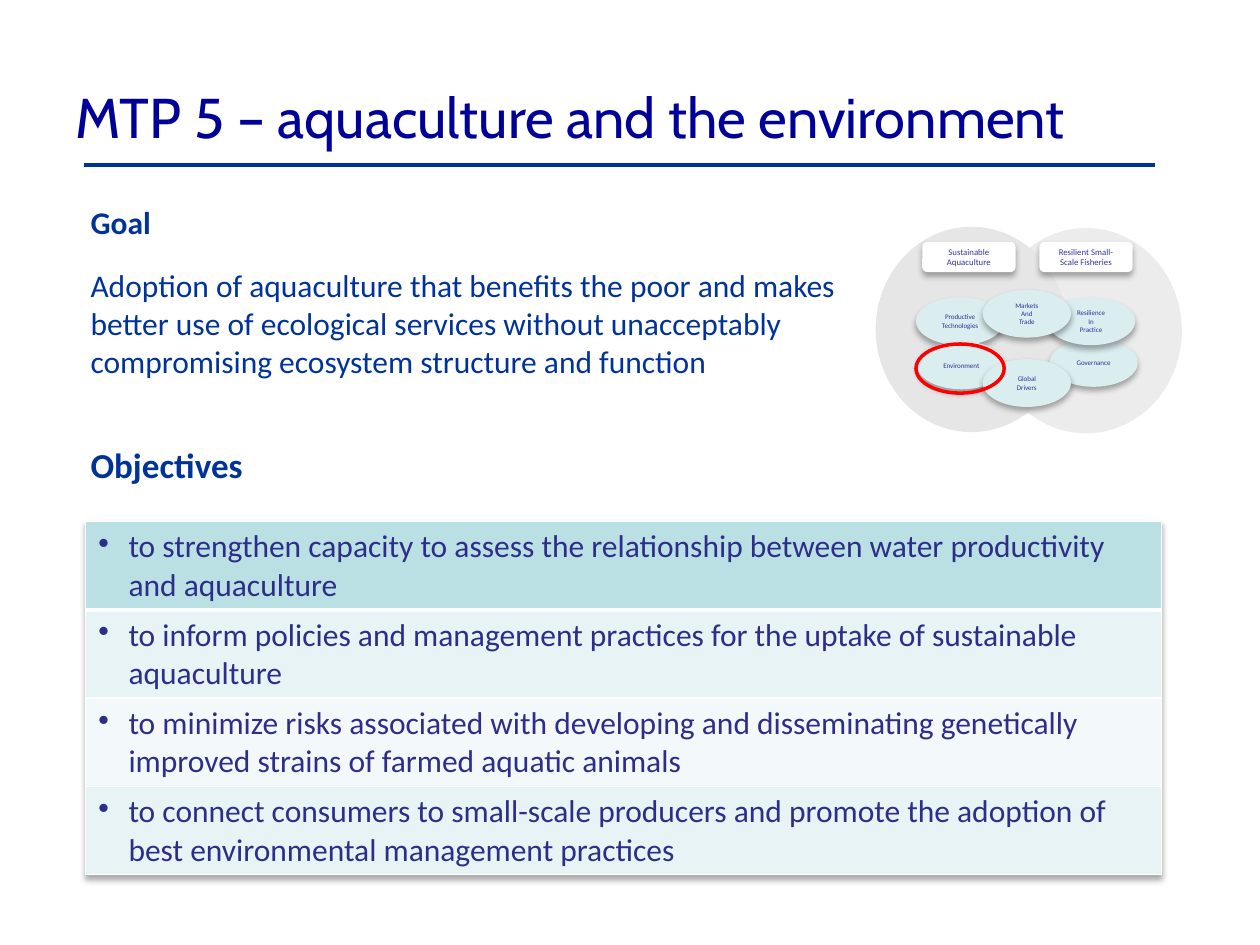
from dataclasses import dataclass

from lxml.etree import SubElement
from pptx import Presentation
from pptx.dml.color import RGBColor
from pptx.enum.shapes import MSO_CONNECTOR, MSO_SHAPE
from pptx.enum.text import MSO_ANCHOR, MSO_AUTO_SIZE, PP_ALIGN
from pptx.oxml import parse_xml
from pptx.oxml.ns import nsdecls, qn
from pptx.util import Inches, Pt

NAVY, INDIGO, WHITE, GREY, AQUA = "003399", "333399", "FFFFFF", "E6E6E6", "DAEDEF"


@dataclass
class Node:
    """A labelled shape of the programme diagram."""
    label: str
    left: float
    top: float


THEMES = [
    Node("Sustainable\nAquaculture", 7.32, 1.92),
    Node("Resilient Small-\nScale Fisheries", 8.25, 1.92),
]
TOPICS = [
    Node("Productive\nTechnologies", 7.27, 2.36),
    Node("Environment", 7.28, 2.71),
    Node("Governance", 8.33, 2.69),
    Node("Global\nDrivers", 7.8, 2.85),
    Node("Resilience\nIn\nPractice", 8.31, 2.36),
    Node("Markets\nAnd\nTrade", 7.8, 2.3),
]
OBJECTIVES = [
    ("to strengthen capacity to assess the relationship between water productivity "
     "and aquaculture", "BBE0E3"),
    ("to inform policies and management practices for the uptake of sustainable "
     "aquaculture", "E7F3F4"),
    ("to minimize risks associated with developing and disseminating genetically "
     "improved strains of farmed aquatic animals", "F3F9FA"),
    ("to connect consumers to small-scale producers and promote the adoption of "
     "best environmental management practices", "E7F3F4"),
]


def rgb(color: str) -> RGBColor:
    return RGBColor.from_string(color)


def box(left: float, top: float, width: float, height: float) -> list:
    return [Inches(value) for value in (left, top, width, height)]


def write(paragraph, text: str, *, size: float, color: str, font: str = "Calibri",
          bold: bool = False, align=PP_ALIGN.LEFT, before: float = 0) -> None:
    paragraph.alignment = align
    paragraph.space_before = Pt(before)
    run = paragraph.add_run()
    run.text = text
    run.font.name, run.font.size, run.font.bold = font, Pt(size), bold
    run.font.color.rgb = rgb(color)


def soft_shadow():
    return parse_xml(
        f'<a:effectLst {nsdecls("a")}><a:outerShdw blurRad="{Pt(3.5)}" dist="{Pt(2.2)}" '
        'dir="5400000" rotWithShape="0"><a:srgbClr val="000000"><a:alpha val="32000"/>'
        '</a:srgbClr></a:outerShdw></a:effectLst>')


def add_plain_shape(shapes, kind, place: list, fill: str):
    shape = shapes.add_shape(kind, *place)
    shape.shadow.inherit = False
    shape.fill.solid()
    shape.fill.fore_color.rgb = rgb(fill)
    shape.line.fill.background()
    return shape


def add_node(shapes, node: Node, kind, width: float, height: float, fill: str,
             size: float) -> None:
    shape = add_plain_shape(shapes, kind, box(node.left, node.top, width, height), fill)
    properties = shape.element.spPr
    properties.replace(properties.find(qn("a:effectLst")), soft_shadow())
    frame = shape.text_frame
    frame.margin_left = frame.margin_right = frame.margin_top = frame.margin_bottom = 0
    frame.word_wrap = False
    frame.vertical_anchor = MSO_ANCHOR.MIDDLE
    for index, line in enumerate(node.label.split("\n")):
        paragraph = frame.add_paragraph() if index else frame.paragraphs[0]
        write(paragraph, line, size=size, color=INDIGO, align=PP_ALIGN.CENTER)


def set_border(cell, side: str, width: float) -> None:
    line = SubElement(cell._tc.get_or_add_tcPr(), qn(f"a:{side}"), w=str(Pt(width)))
    fill = SubElement(line, qn("a:solidFill"))
    SubElement(fill, qn("a:srgbClr"), val=WHITE)


def add_bullet(paragraph, indent: float) -> None:
    properties = paragraph._p.get_or_add_pPr()
    properties.set("marL", str(Inches(indent)))
    properties.set("indent", str(-Inches(indent)))
    SubElement(properties, qn("a:buChar"), char="•")


def add_heading_and_goal(slide) -> None:
    title = slide.shapes.title
    title.left, title.top, title.width, title.height = box(0.5, 0.3, 9.19, 1.25)
    title.text_frame.vertical_anchor = MSO_ANCHOR.MIDDLE
    write(title.text_frame.paragraphs[0], "MTP 5 – aquaculture and the environment",
          size=32, color="000099", font="Cabin")

    rule = slide.shapes.add_connector(
        MSO_CONNECTOR.STRAIGHT, Inches(0.67), Inches(1.31), Inches(9.17), Inches(1.31))
    rule.line.color.rgb = rgb(NAVY)
    rule.line.width = Pt(2.25)
    SubElement(rule.element.spPr, qn("a:effectLst"))

    goal = slide.shapes.add_textbox(*box(0.62, 1.56, 6.21, 1.82)).text_frame
    goal.word_wrap = True
    write(goal.paragraphs[0], "Goal", size=18, color=NAVY, bold=True)
    write(goal.add_paragraph(),
          "Adoption of aquaculture that benefits the poor and makes better use of "
          "ecological services without unacceptably compromising ecosystem structure "
          "and function", size=18, color=NAVY, before=14.5)


def add_programme_diagram(slide) -> None:
    diagram = slide.shapes.add_group_shape().shapes
    add_plain_shape(diagram, MSO_SHAPE.OVAL, box(6.95, 1.8, 1.52, 1.63), GREY)
    fisheries = add_plain_shape(diagram, MSO_SHAPE.OVAL, box(7.86, 1.81, 1.52, 1.63), GREY)
    tint = fisheries.element.spPr.find(qn("a:solidFill"))[0]
    SubElement(tint, qn("a:alpha"), val="75000")
    for theme in THEMES:
        add_node(diagram, theme, MSO_SHAPE.ROUNDED_RECTANGLE, 0.74, 0.24, WHITE, 5)
    for topic in TOPICS:
        add_node(diagram, topic, MSO_SHAPE.OVAL, 0.7, 0.38, AQUA, 4)

    # Ring around the current topic
    highlight = slide.shapes.add_shape(MSO_SHAPE.OVAL, *box(7.27, 2.73, 0.7, 0.39))
    highlight.shadow.inherit = False
    highlight.fill.background()
    highlight.line.color.rgb = rgb("FF0000")
    highlight.line.width = Pt(2)


def add_objectives(slide) -> None:
    heading = slide.shapes.add_textbox(*box(0.62, 3.47, 1.58, 0.44)).text_frame
    heading.word_wrap = False
    heading.auto_size = MSO_AUTO_SIZE.SHAPE_TO_FIT_TEXT
    write(heading.paragraphs[0], "Objectives", size=20, color=NAVY, bold=True)

    table = slide.shapes.add_table(len(OBJECTIVES), 1, *box(0.68, 4.14, 8.54, 2.8)).table
    table._tbl.tblPr.insert(0, soft_shadow())
    for row, (objective, fill) in enumerate(OBJECTIVES):
        cell = table.cell(row, 0)
        # The first row is set off by a thicker rule
        set_border(cell, "lnL", 1)
        set_border(cell, "lnR", 1)
        set_border(cell, "lnT", 3 if row == 1 else 1)
        set_border(cell, "lnB", 3 if row == 0 else 1)
        cell.fill.solid()
        cell.fill.fore_color.rgb = rgb(fill)
        paragraph = cell.text_frame.paragraphs[0]
        write(paragraph, objective, size=18, color="2D2D8A")
        add_bullet(paragraph, 0.24)


def main() -> None:
    deck = Presentation()
    deck.slide_width, deck.slide_height = Inches(10), Inches(7.5)
    slide = deck.slides.add_slide(deck.slide_layouts.get_by_name("Title Only"))
    add_heading_and_goal(slide)
    add_programme_diagram(slide)
    add_objectives(slide)
    deck.save("out.pptx")


if __name__ == "__main__":
    main()
